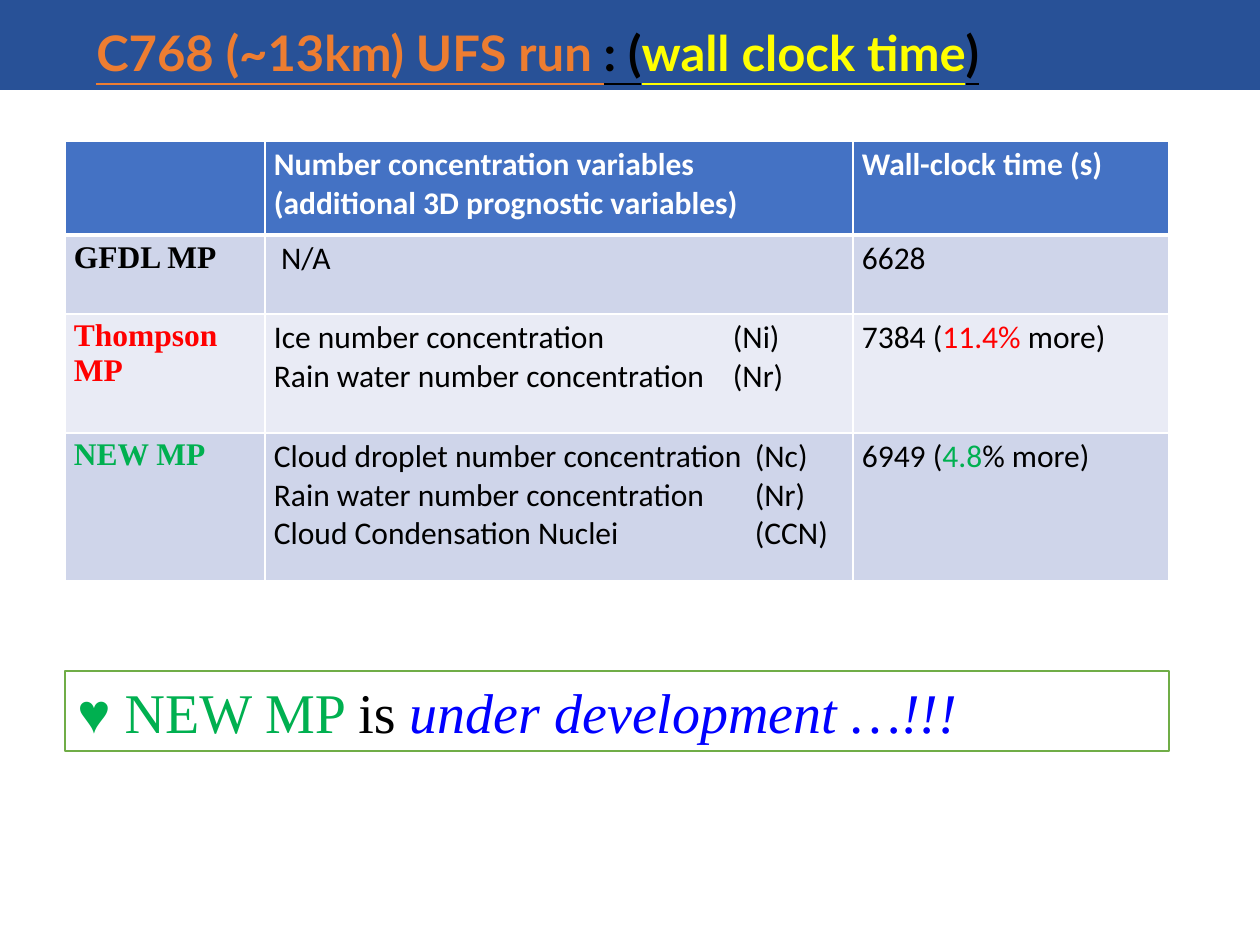
import pptx
import pptx.dml.color
import pptx.enum.shapes
import pptx.enum.text
import pptx.oxml
import pptx.oxml.ns
import pptx.util
from lxml import etree

RGB = pptx.dml.color.RGBColor
WHITE = RGB(0xFF, 0xFF, 0xFF)
BLACK = RGB(0, 0, 0)
NAVY = RGB(0x28, 0x51, 0x97)
BLUE = RGB(0x44, 0x72, 0xC4)
BAND_DARK = RGB(0xCF, 0xD5, 0xEA)
BAND_LIGHT = RGB(0xE9, 0xEB, 0xF5)
ORANGE = RGB(0xED, 0x7D, 0x31)
YELLOW = RGB(0xFF, 0xFF, 0)
RED = RGB(0xFF, 0, 0)
GREEN = RGB(0, 0xB0, 0x50)
FRAME_GREEN = RGB(0x70, 0xAD, 0x47)
INK_BLUE = RGB(0, 0, 0xFF)

SANS, SERIF, TITLE = "Calibri", "Times New Roman", "Lato"
EMU_PER_PX = 914400 // 126


def px(n):
    return pptx.util.Emu(n * EMU_PER_PX)


def add_child(parent, tag, **attrs):
    return etree.SubElement(parent, pptx.oxml.ns.qn(tag), attrs)


class Deck:
    """Holds the presentation, its current slide and the table style."""

    def __init__(self, width, height):
        self.prs = pptx.Presentation()
        self.prs.slide_width, self.prs.slide_height = px(width), px(height)
        self.s = self.prs.slides.add_slide(self.prs.slide_layouts[6])
        self.cell_margins = (9, 5)
        self.cell_size = 18

    def fill_paragraph(self, p, runs, font, size, bold=False, underline=None, tab=None):
        """Fill a paragraph from (text, colour[, italic]) runs."""
        if tab:
            tabs = add_child(p._p.get_or_add_pPr(), "a:tabLst")
            add_child(tabs, "a:tab", pos=str(px(tab)), algn="l")
        f = p.font
        f.name, f.size, f.bold, f.underline = font, pptx.util.Pt(size), bold, underline
        if len(runs) == 1:
            f.color.rgb = runs[0][1]
        for text, color, *italic in runs:
            r = p.add_run()
            r.text = text
            if len(runs) > 1:
                r.font.color.rgb = color
            if italic:
                r.font.italic = italic[0]

    def rect(self, x, y, w, h, fill=None, line=None):
        sp = self.s.shapes.add_shape(
            pptx.enum.shapes.MSO_SHAPE.RECTANGLE, px(x), px(y), px(w), px(h))
        sp.shadow.inherit = False
        if fill is None:
            sp.fill.background()
        else:
            sp.fill.solid()
            sp.fill.fore_color.rgb = fill
        if line is None:
            sp.line.fill.background()
        else:
            sp.line.color.rgb = line
            sp.line.width = pptx.util.Pt(0.75)
        return sp

    def framed_text(self, x, y, w, h, runs, line, font, size):
        tf = self.rect(x, y, w, h, line=line).text_frame
        tf.word_wrap = True
        tf.vertical_anchor = pptx.enum.text.MSO_ANCHOR.TOP
        tf.paragraphs[0].alignment = pptx.enum.text.PP_ALIGN.LEFT
        self.fill_paragraph(tf.paragraphs[0], runs, font, size)

    def text(self, x, y, w, h, runs, font, size, **style):
        tf = self.s.shapes.add_textbox(px(x), px(y), px(w), px(h)).text_frame
        tf.word_wrap = True
        self.fill_paragraph(tf.paragraphs[0], runs, font, size, **style)

    def borders(self, cell, **widths):
        """Draw white borders, one point wide unless a side says otherwise."""
        tcPr = cell._tc.get_or_add_tcPr()
        for side in "LRTB":
            width = pptx.util.Pt(widths.get(side, 1))
            ln = add_child(tcPr, "a:ln" + side, w=str(width))
            add_child(add_child(ln, "a:solidFill"), "a:srgbClr", val=str(WHITE))

    def table(self, x, y, widths, heights, rows, tabs):
        """Build a table; a cell is a list of paragraphs, each a list of runs."""
        tbl = self.s.shapes.add_table(
            len(rows), len(widths), px(x), px(y), px(sum(widths)), px(sum(heights))).table
        for column, w in zip(tbl.columns, widths):
            column.width = px(w)
        for row, h in zip(tbl.rows, heights):
            row.height = px(h)
        for i, row in enumerate(rows):
            fill = BLUE if i == 0 else BAND_DARK if i % 2 else BAND_LIGHT
            for j, paragraphs in enumerate(row):
                cell = tbl.cell(i, j)
                cell.margin_left = cell.margin_right = px(self.cell_margins[0])
                cell.margin_top = cell.margin_bottom = px(self.cell_margins[1])
                self.borders(cell, **({"B": 3} if i == 0 else {"T": 3} if i == 1 else {}))
                cell.fill.solid()
                cell.fill.fore_color.rgb = fill
                tf = cell.text_frame
                for k, runs in enumerate(paragraphs):
                    p = tf.add_paragraph() if k else tf.paragraphs[0]
                    self.fill_paragraph(
                        p, runs, SERIF if i and j == 0 else SANS, self.cell_size,
                        bold=i == 0 or j == 0, tab=tabs[i] if j == 1 else None)


def lines(color, *texts):
    """One single-coloured paragraph for each text."""
    return [[(text, color)] for text in texts]


def main():
    deck = Deck(1260, 945)
    deck.rect(0, 0, 1260, 90, fill=NAVY)

    timings = [
        [[],
         lines(WHITE, "Number concentration variables",
               "(additional 3D prognostic variables)"),
         lines(WHITE, "Wall-clock time (s)")],
        [lines(BLACK, "GFDL MP"), lines(BLACK, " N/A"), lines(BLACK, "6628")],
        [lines(RED, "Thompson MP"),
         lines(BLACK, "Ice number concentration\t(Ni)",
               "Rain water number concentration\t(Nr)"),
         [[("7384 (", BLACK), ("11.4% ", RED), ("more)", BLACK)]]],
        [lines(GREEN, "NEW MP"),
         lines(BLACK, "Cloud droplet number concentration\t(Nc)",
               "Rain water number concentration\t(Nr)",
               "Cloud Condensation Nuclei\t(CCN)"),
         [[("6949 (", BLACK), ("4.8", GREEN), ("% more)", BLACK)]]],
    ]
    deck.table(65, 141, [200, 588, 316], [94, 79, 119, 148], timings,
               tabs=[None, None, 459, 481])

    deck.text(84, 16, 1132, 72,
              [("C768 (~13km) UFS run ", ORANGE), (": (", BLACK),
               ("wall clock time", YELLOW), (")", BLACK)],
              TITLE, 28, bold=True, underline=True)

    deck.framed_text(65, 671, 1104, 80,
                     [("♥ NEW MP ", GREEN), ("is ", BLACK),
                      ("under development …!!!", INK_BLUE, True)],
                     FRAME_GREEN, SERIF, 32)

    deck.prs.save("out.pptx")


if __name__ == "__main__":
    main()
